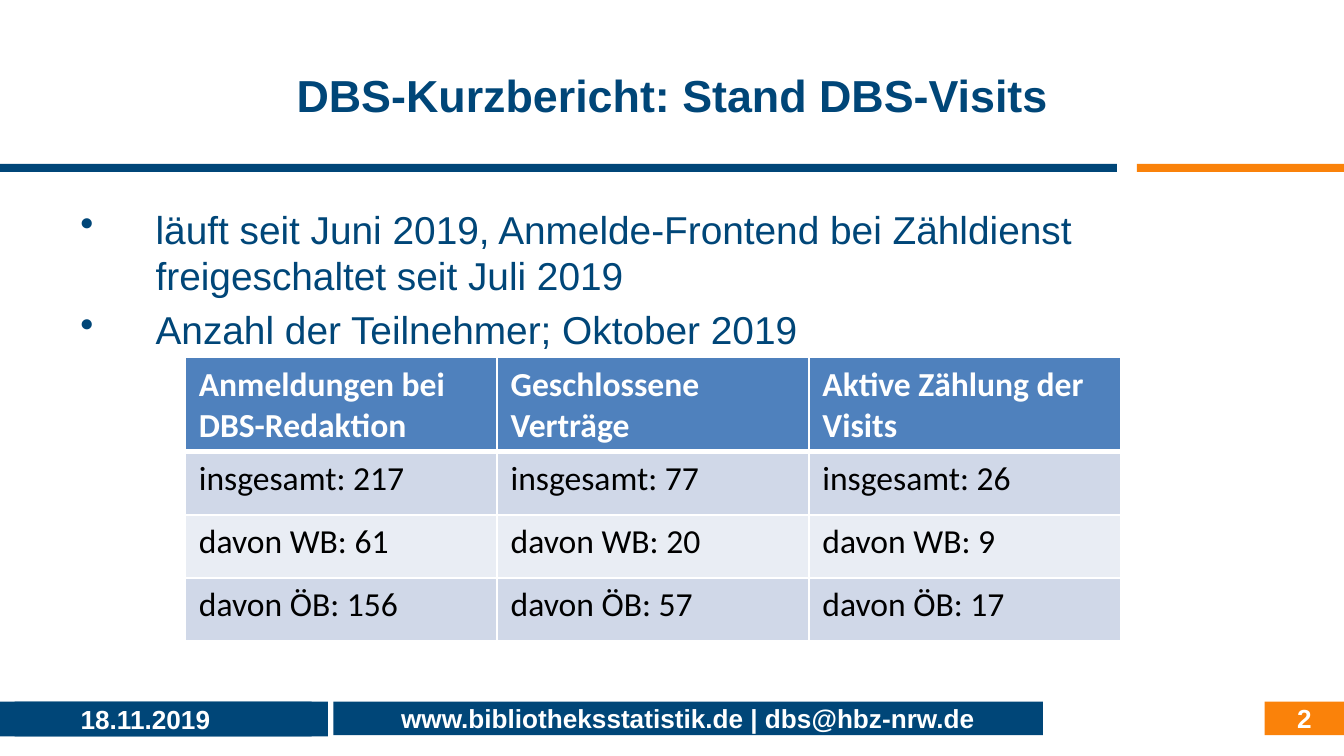
from pptx import Presentation
from pptx.dml.color import RGBColor
from pptx.enum.shapes import MSO_SHAPE
from pptx.enum.text import MSO_ANCHOR, PP_ALIGN
from pptx.oxml import parse_xml
from pptx.oxml.ns import nsdecls
from pptx.util import Inches, Pt

RECTANGLE = MSO_SHAPE.RECTANGLE
MIDDLE, TOP = MSO_ANCHOR.MIDDLE, MSO_ANCHOR.TOP
LEFT, CENTER, RIGHT = PP_ALIGN.LEFT, PP_ALIGN.CENTER, PP_ALIGN.RIGHT

NAVY = RGBColor(0x00, 0x46, 0x78)
ORANGE = RGBColor(0xFA, 0x82, 0x0A)
WHITE = RGBColor(0xFF, 0xFF, 0xFF)
BLACK = RGBColor(0x00, 0x00, 0x00)
HEADER_BLUE = RGBColor(0x4F, 0x81, 0xBD)
BAND_DARK = RGBColor(0xD0, 0xD8, 0xE8)
BAND_LIGHT = RGBColor(0xE9, 0xED, 0xF4)

BULLETS = [
    "läuft seit Juni 2019, Anmelde-Frontend bei Zähldienst freigeschaltet seit Juli 2019",
    "Anzahl der Teilnehmer; Oktober 2019",
]
VISITS = [
    ["Anmeldungen bei DBS-Redaktion", "Geschlossene Verträge", "Aktive Zählung der Visits"],
    ["insgesamt: 217", "insgesamt: 77", "insgesamt: 26"],
    ["davon WB: 61", "davon WB: 20", "davon WB: 9"],
    ["davon ÖB: 156", "davon ÖB: 57", "davon ÖB: 17"],
]


class SlideBuilder:
    """Holds the style and the current slide, and adds each kind of element."""

    def __init__(self, page):
        self.page = page
        self.font = "Arial"
        self.table_font = "Calibri"

    def format(self, para, size, color, bold=False, align=LEFT, font=None):
        para.alignment = align
        para.font.name = font or self.font
        para.font.size = Pt(size)
        para.font.bold = bold
        para.font.color.rgb = color

    def title(self, text, left, top, width, height):
        title = self.page.shapes.title
        title.left, title.top = Inches(left), Inches(top)
        title.width, title.height = Inches(width), Inches(height)
        title.text_frame.text = text
        title.text_frame.vertical_anchor = MIDDLE
        self.format(title.text_frame.paragraphs[0], 24, NAVY, True, CENTER)

    def bar(self, color, left, top, width, height):
        bar = self.page.shapes.add_shape(
            RECTANGLE, Inches(left), Inches(top), Inches(width), Inches(height))
        bar.shadow.inherit = False
        bar.fill.solid()
        bar.fill.fore_color.rgb = color
        bar.line.fill.background()
        return bar

    def footer(self, text, color, left, width, align,
               height=0.25, inset_left=0.1, inset_right=0.1):
        frame = self.bar(color, left, 5.22, width, height).text_frame
        frame.margin_left, frame.margin_right = Inches(inset_left), Inches(inset_right)
        frame.margin_top = frame.margin_bottom = 0
        frame.vertical_anchor = MIDDLE
        frame.text = text
        self.format(frame.paragraphs[0], 14, WHITE, True, align)

    def bullets(self, items, left, top, width, height):
        box = self.page.shapes.add_textbox(
            Inches(left), Inches(top), Inches(width), Inches(height))
        frame = box.text_frame
        frame.word_wrap = True
        frame.vertical_anchor = TOP
        for index, item in enumerate(items):
            para = frame.paragraphs[0] if index == 0 else frame.add_paragraph()
            para.text = item
            if index:
                para.space_before = Pt(4)
            properties = para._p.get_or_add_pPr()
            properties.set("marL", str(Inches(0.56)))
            properties.set("indent", str(Inches(-0.56)))
            properties.append(parse_xml(f'<a:buChar {nsdecls("a")} char="•"/>'))
            self.format(para, 20.8, NAVY)

    def border(self, cell, side, width):
        cell._tc.get_or_add_tcPr().append(parse_xml(
            f'<a:{side} {nsdecls("a")} w="{Pt(width)}"><a:solidFill>'
            f'<a:srgbClr val="{WHITE}"/></a:solidFill></a:{side}>'))

    def table(self, rows, left, top, column_width, row_heights):
        columns = len(rows[0])
        table = self.page.shapes.add_table(
            len(rows), columns, Inches(left), Inches(top),
            Inches(column_width * columns), Inches(sum(row_heights))).table
        for column in table.columns:
            column.width = Inches(column_width)
        for row_index, values in enumerate(rows):
            table.rows[row_index].height = Inches(row_heights[row_index])
            header = row_index == 0
            fill = HEADER_BLUE if header else BAND_DARK if row_index % 2 else BAND_LIGHT
            for column_index, value in enumerate(values):
                cell = table.cell(row_index, column_index)
                for side in ("lnL", "lnR", "lnT", "lnB"):
                    thick = (row_index, side) in ((0, "lnB"), (1, "lnT"))
                    self.border(cell, side, 3 if thick else 1)
                cell.fill.solid()
                cell.fill.fore_color.rgb = fill
                cell.text = value
                self.format(cell.text_frame.paragraphs[0], 18,
                            WHITE if header else BLACK, header, font=self.table_font)


def main():
    deck = Presentation()
    deck.slide_width = Inches(10)
    deck.slide_height = deck.slide_width * 9 // 16
    builder = SlideBuilder(deck.slides.add_slide(deck.slide_layouts[5]))
    builder.bar(ORANGE, 8.46, 1.22, 1.54, 0.06)
    builder.bar(NAVY, 0, 1.22, 8.31, 0.06)
    builder.title("DBS-Kurzbericht: Stand DBS-Visits", 0.5, 0.23, 9, 0.94)
    builder.bullets(BULLETS, 0.5, 1.48, 9, 1.2)
    builder.bar(NAVY, -0.01, 5.22, 2.33, 0.26)
    builder.footer("www.bibliotheksstatistik.de | dbs@hbz-nrw.de", NAVY, 2.48, 5.28, CENTER)
    builder.footer("2", ORANGE, 9.41, 0.59, RIGHT, inset_right=0.24)
    builder.footer("18.11.2019", NAVY, 0.11, 2.33, LEFT, height=0.26, inset_left=0.49)
    builder.table(VISITS, 1.38, 2.66, 2.32, [0.7, 0.47, 0.47, 0.47])
    deck.save("out.pptx")


if __name__ == "__main__":
    main()
